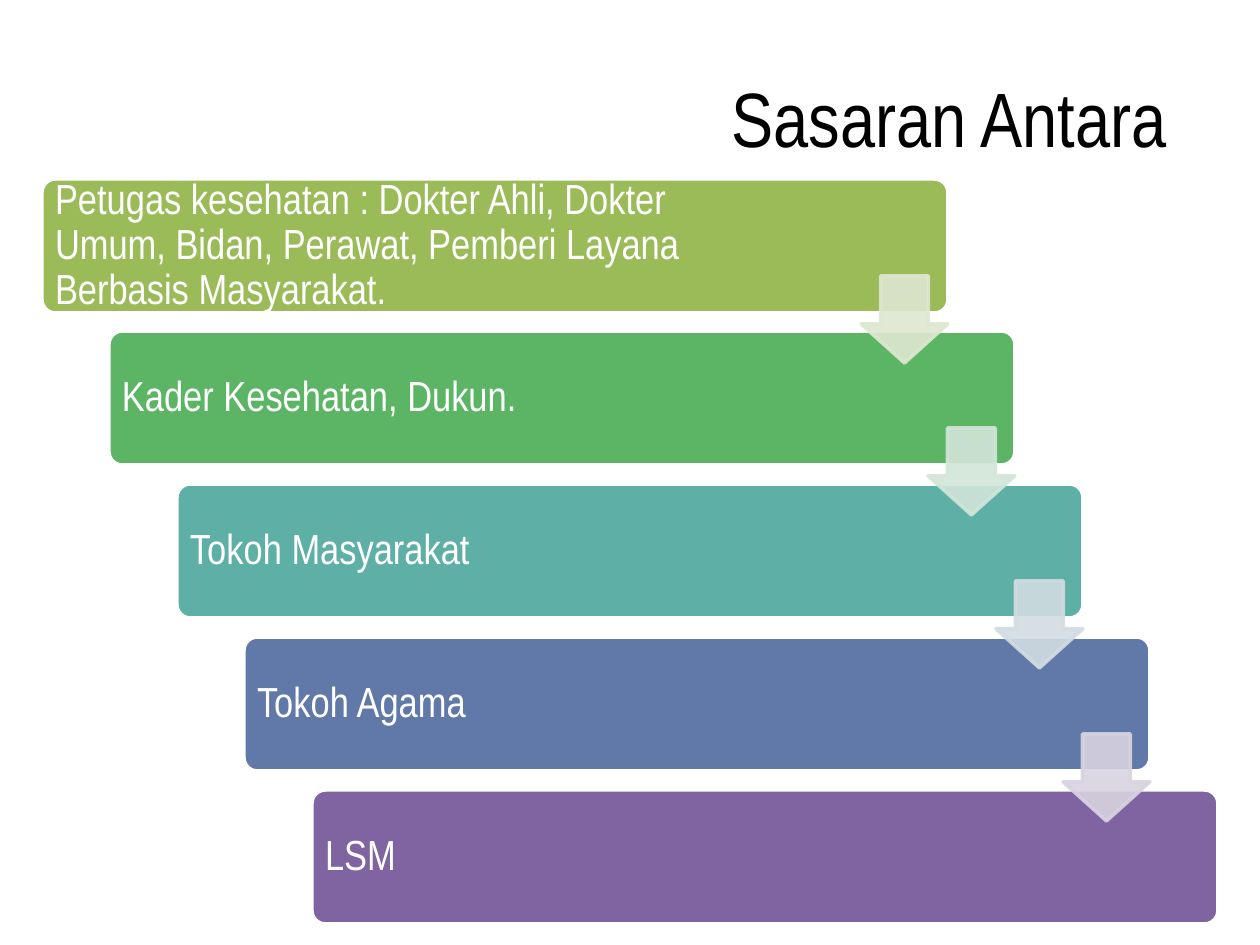
from lxml.etree import SubElement
from pptx import Presentation
from pptx.dml.color import RGBColor
from pptx.enum.shapes import MSO_SHAPE as Shape
from pptx.enum.text import MSO_ANCHOR as Anchor, PP_ALIGN as Align
from pptx.oxml.ns import qn
from pptx.util import Emu, Pt

PX = 914400 / 126
FONT = "Arial Narrow"
BLACK = RGBColor(0x00, 0x00, 0x00)
WHITE = RGBColor(0xFF, 0xFF, 0xFF)

STEPS = [
    ("Petugas kesehatan : Dokter Ahli, Dokter Umum, Bidan, Perawat, "
     "Pemberi Layana Berbasis Masyarakat.", RGBColor(0x9B, 0xBB, 0x59)),
    ("Kader Kesehatan, Dukun.", RGBColor(0x5C, 0xB5, 0x65)),
    ("Tokoh Masyarakat", RGBColor(0x5E, 0xAF, 0xA6)),
    ("Tokoh Agama", RGBColor(0x61, 0x79, 0xA8)),
    ("LSM", RGBColor(0x80, 0x64, 0xA2)),
]
ARROW_COLORS = [
    RGBColor(0xDE, 0xE7, 0xD1),
    RGBColor(0xD2, 0xE5, 0xD9),
    RGBColor(0xD2, 0xDC, 0xE2),
    RGBColor(0xD8, 0xD3, 0xE0),
]
BAR_WIDTH, BAR_HEIGHT = 906, 134
LABEL_WIDTH = 752
ARROW_SIZE, ARROW_DROP = 87, 97


def px(*lengths):
    return [Emu(round(length * PX)) for length in lengths]


def add_text(slide, box, text, size, color, margins):
    """Add middle-anchored text; margins are left, top, right, bottom."""
    frame = slide.shapes.add_textbox(*px(*box)).text_frame
    frame.word_wrap = True
    frame.vertical_anchor = Anchor.MIDDLE
    (frame.margin_left, frame.margin_top,
     frame.margin_right, frame.margin_bottom) = px(*margins)
    frame.text = text
    paragraph = frame.paragraphs[0]
    font = paragraph.runs[0].font
    font.name, font.size, font.color.rgb = FONT, Pt(size), color
    return paragraph


def add_filled_shape(slide, kind, box, adjustments, fill, line):
    shape = slide.shapes.add_shape(kind, *px(*box))
    shape.shadow.inherit = False
    for index, value in enumerate(adjustments):
        shape.adjustments[index] = value
    shape.fill.solid()
    shape.fill.fore_color.rgb = fill
    shape.line.color.rgb = line
    shape.line.width = Pt(2)
    return shape


def add_title(slide, box):
    paragraph = add_text(slide, box, "Sasaran Antara", 44, BLACK, (13, 6, 30, 6))
    paragraph.alignment = Align.RIGHT


def add_bar(slide, left, top, text, color):
    add_filled_shape(slide, Shape.ROUNDED_RECTANGLE,
                     (left, top, BAR_WIDTH, BAR_HEIGHT), [0.1], color, WHITE)
    paragraph = add_text(slide, (left, top, LABEL_WIDTH, BAR_HEIGHT),
                         text, 24, WHITE, (13, 13, 13, 13))
    paragraph.line_spacing = 0.9


def add_arrow(slide, left, top, color):
    arrow = add_filled_shape(slide, Shape.DOWN_ARROW,
                             (left, top, ARROW_SIZE, ARROW_SIZE),
                             [0.55, 0.45], color, color)
    for element in arrow.element.spPr.iter(qn("a:srgbClr")):
        SubElement(element, qn("a:alpha"), val="90000")


def add_staircase(slide, left, top, width, height):
    """Step the bars from the top left to the bottom right of the box."""
    last = len(STEPS) - 1
    corners = [(left + (width - BAR_WIDTH) * i // last,
                top + (height - BAR_HEIGHT) * i // last)
               for i in range(len(STEPS))]
    for (x, y), (text, color) in zip(corners, STEPS):
        add_bar(slide, x, y, text, color)
    for (x, y), color in zip(corners, ARROW_COLORS):
        add_arrow(slide, x + BAR_WIDTH - ARROW_SIZE, y + ARROW_DROP, color)


def main():
    presentation = Presentation()
    presentation.slide_width, presentation.slide_height = px(1260, 945)
    slide = presentation.slides.add_slide(presentation.slide_layouts[6])
    add_title(slide, (63, 38, 1134, 158))
    add_staircase(slide, 42, 179, 1176, 745)
    presentation.save("out.pptx")


if __name__ == "__main__":
    main()
